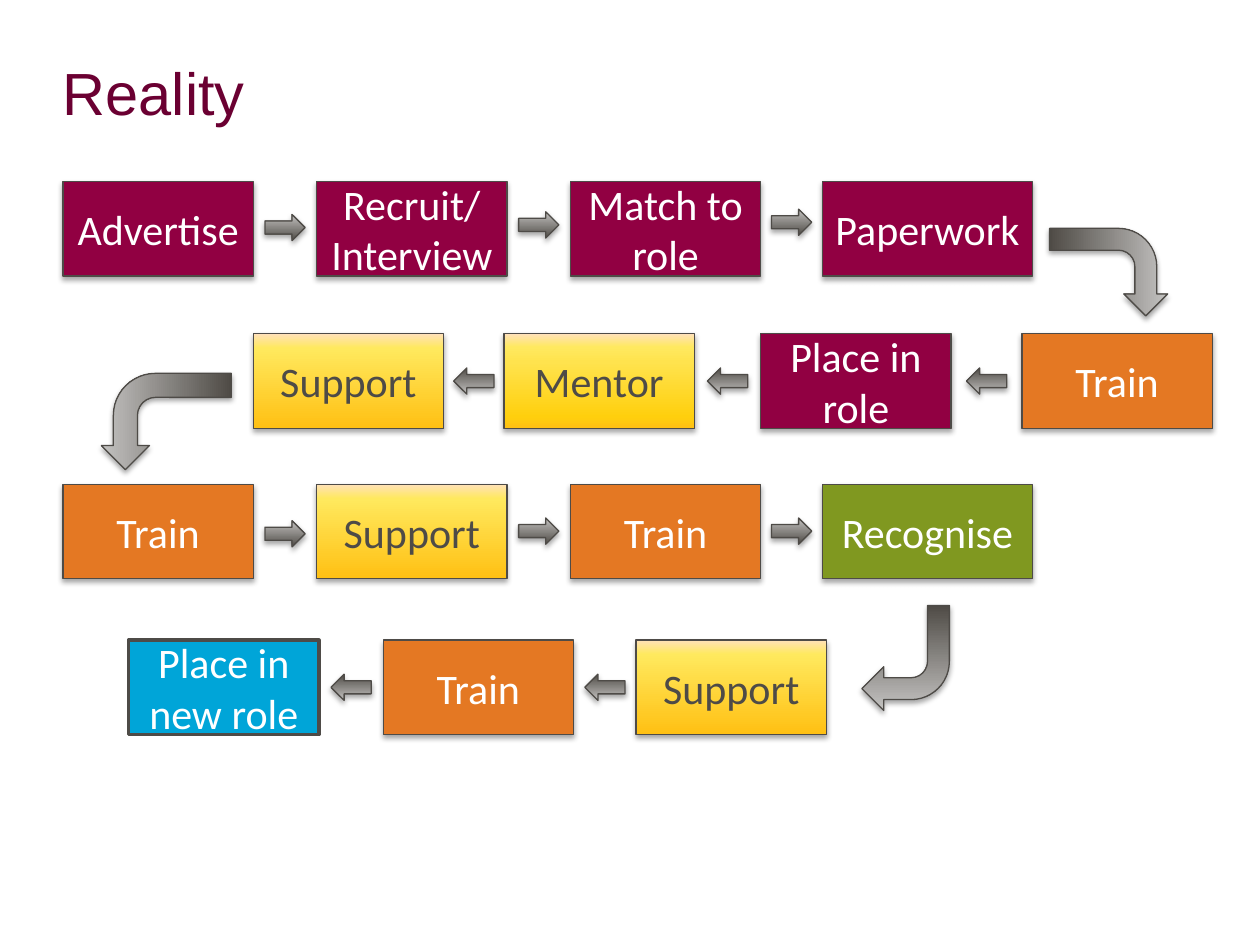
from lxml import etree
from pptx import Presentation
from pptx.dml.color import RGBColor
from pptx.enum import shapes, text
from pptx.oxml.ns import qn
from pptx.util import Pt

COLORS = {
    "title": "6B0032", "plum": "910042", "orange": "E47823",
    "green": "809820", "blue": "00A5D8", "dark": "4E4B47", "white": "FFFFFF",
}
GRADIENTS = {  # stops run from bottom to top
    "yellow": [(0, "FFC013"), (85, "FFE95E"), (100, "FFE1B9")],
    "gold": [(0, "FFC013"), (12, "FFCF0D"), (70, "FFE34E"), (86, "FFE95F"), (100, "FFE1B9")],
    "grey": [(0, "4F4B46"), (100, "C3C2C0")],
}
BOX_W, WIDE_W, BOX_H = 108.75, 120, 54
ARROW_W, ARROW_H = 23, 15

# Boxes are (label, fill, left), listed left to right
ROWS = [
    dict(top=103.75, turn=0, arrow_tops=(122.5, 121, 119.5), boxes=[
        ("Advertise", "plum", 36), ("Recruit/ Interview", "plum", 181),
        ("Match to role", "plum", 326), ("Paperwork", "plum", 470)]),
    dict(top=190.75, turn=180, arrow_tops=(210.25, 210.25, 210.25), boxes=[
        ("Support", "yellow", 144.75), ("Mentor", "gold", 288),
        ("Place in role", "plum", 434.75), ("Train", "orange", 584)]),
    dict(top=276.75, turn=0, arrow_tops=(297.5, 296, 296), boxes=[
        ("Train", "orange", 36), ("Support", "yellow", 181),
        ("Train", "orange", 326), ("Recognise", "green", 470)]),
    dict(top=365.75, turn=180, arrow_tops=(385.25, 385.25), boxes=[
        ("Place in new role", "blue", 73.5), ("Train", "orange", 219),
        ("Support", "yellow", 363.5)]),
]
WIDE = {"Paperwork", "Recognise"}

# Row-to-row turns: left, top, width, height, rotation, mirrored
BENDS = [
    (608.5, 121.75, 50, 67.5, 90, False),
    (67.5, 203.75, 55, 74.25, 270, True),
    (492.5, 346, 50, 60, 180, False),
]


def rgb(name):
    return RGBColor.from_string(COLORS[name])


def fill_gradient(sp, stops):
    sp.fill.gradient()
    sp.fill.gradient_angle = 90
    gs_list = next(sp._element.spPr.iter(qn("a:gsLst")))
    for gs in list(gs_list):
        gs_list.remove(gs)
    for pos, color in stops:
        gs = etree.SubElement(gs_list, qn("a:gs"), pos=str(pos * 1000))
        etree.SubElement(gs, qn("a:srgbClr"), val=color)


def add_shadow(sp):
    effects = sp._element.spPr.find(qn("a:effectLst"))
    shadow = etree.SubElement(
        effects, qn("a:outerShdw"), blurRad=str(Pt(3.1)), dist=str(Pt(1.8)),
        dir="5400000", rotWithShape="0")
    color = etree.SubElement(shadow, qn("a:srgbClr"), val="000000")
    etree.SubElement(color, qn("a:alpha"), val="35000")


def add_styled(slide, kind, box, fill, line=0.75, shadow=True):
    sp = slide.shapes.add_shape(kind, *map(Pt, box))
    if fill in GRADIENTS:
        fill_gradient(sp, GRADIENTS[fill])
    else:
        sp.fill.solid()
        sp.fill.fore_color.rgb = rgb(fill)
    sp.line.color.rgb = rgb("dark")
    sp.line.width = Pt(line)
    sp.shadow.inherit = False
    if shadow:
        add_shadow(sp)
    return sp


def write(sp, label, font, size, color, align):
    tf = sp.text_frame
    tf.word_wrap = True
    tf.vertical_anchor = text.MSO_ANCHOR.MIDDLE
    p = tf.paragraphs[0]
    p.text = label
    p.alignment = align
    p.font.name, p.font.size = font, Pt(size)
    p.font.color.rgb = rgb(color)


def box_width(label):
    return WIDE_W if label in WIDE else BOX_W


def add_box(slide, label, fill, left, top):
    last = fill == "blue"
    sp = add_styled(slide, shapes.MSO_SHAPE.RECTANGLE, (left, top, box_width(label), BOX_H),
                    fill, line=2 if last else 0.75, shadow=not last)
    write(sp, label, "Calibri", 24, "dark" if fill in GRADIENTS else "white",
          text.PP_ALIGN.CENTER)


def add_row_arrows(slide, row):
    """Centre an arrow in each gap between neighbouring boxes."""
    boxes = row["boxes"]
    for (label, _, left), (_, _, right), top in zip(boxes, boxes[1:], row["arrow_tops"]):
        middle = (left + box_width(label) + right) / 2
        sp = add_styled(slide, shapes.MSO_SHAPE.RIGHT_ARROW,
                        (middle - ARROW_W / 2, top, ARROW_W, ARROW_H), "grey")
        sp.rotation = row["turn"]


def main():
    prs = Presentation()
    prs.slide_width, prs.slide_height = Pt(720), Pt(540)
    slide = prs.slides.add_slide(prs.slide_layouts[6])

    title = slide.shapes.add_textbox(Pt(36), Pt(0), Pt(648), Pt(104.5))
    title.text_frame.margin_left = 0
    write(title, "Reality", "Arial", 34, "title", text.PP_ALIGN.LEFT)

    for row in ROWS:
        for label, fill, left in row["boxes"]:
            add_box(slide, label, fill, left, row["top"])
    for row in ROWS:
        add_row_arrows(slide, row)
    for *box, turn, mirrored in BENDS:
        sp = add_styled(slide, shapes.MSO_SHAPE.BENT_ARROW, box, "grey")
        sp.rotation = turn
        if mirrored:
            sp._element.spPr.find(qn("a:xfrm")).set("flipH", "1")

    prs.save("out.pptx")


if __name__ == "__main__":
    main()
